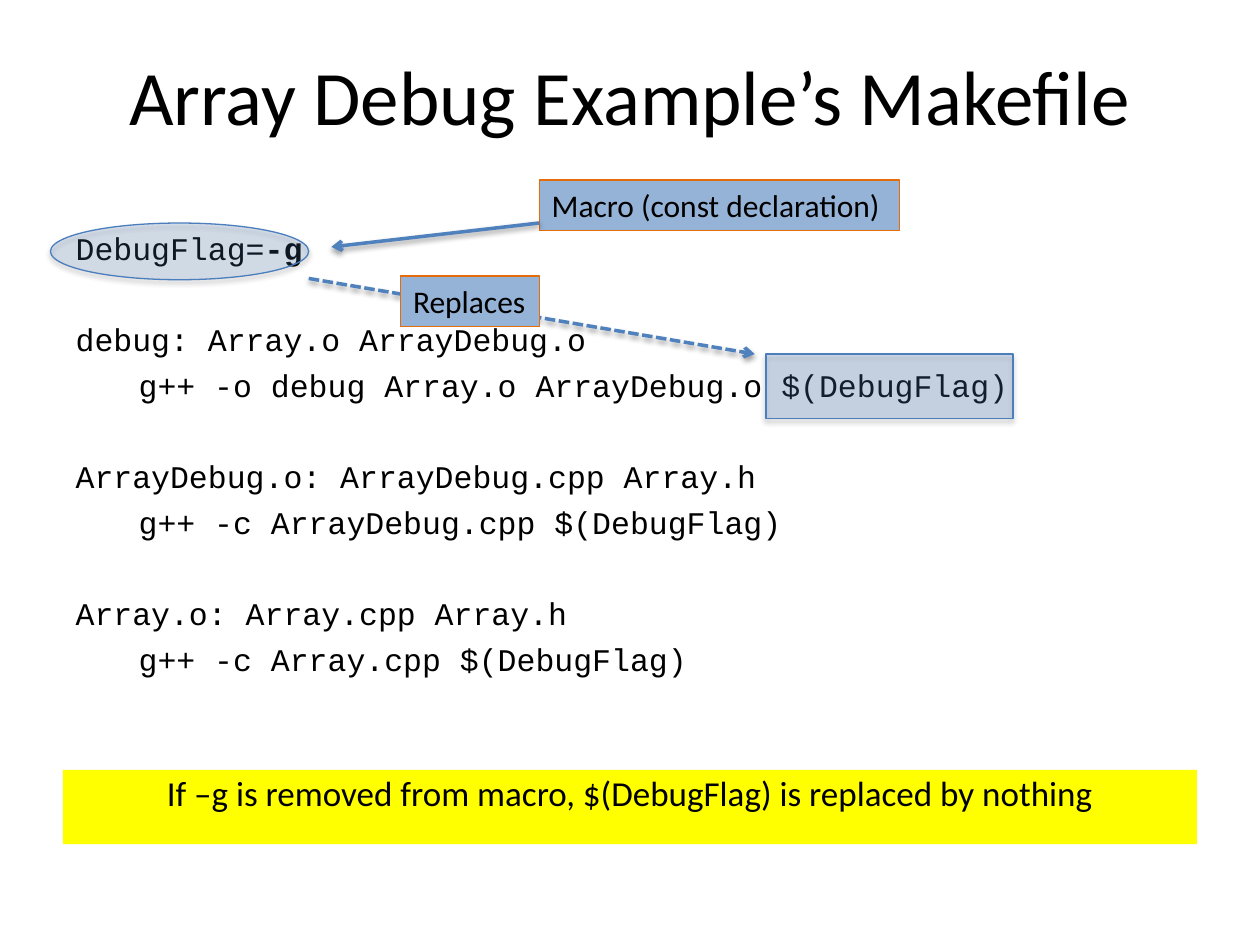
import pptx
import pptx.util
import pptx.oxml
import pptx.oxml.ns
from pptx.dml.color import RGBColor
from pptx.enum.dml import MSO_LINE
from pptx.enum.shapes import MSO_CONNECTOR, MSO_SHAPE
from pptx.enum.text import MSO_ANCHOR, MSO_AUTO_SIZE, PP_ALIGN
from pptx.util import Inches, Pt

THEME = {
    "text_font": "Calibri", "code_font": "Courier New",
    "title_size": 44, "code_size": 18, "label_size": 18, "note_size": 20,
    "ink": "000000", "label_fill": "95B3D7", "label_line": "E46C0A",
    "accent": "4F81BD", "accent_line": "4B7EBC", "note_fill": "FFFF00",
    "thin": 0.75, "arrow": 2, "line_gap": 4.9, "block_gap": 30.2,
}

TITLE = "Array Debug Example’s Makefile"
TITLE_AT = (0.5, 0.3, 9, 0.91)
CODE_AT = (0.5, 1.77, 9, 4.93)
# Each block is a list of lines; a line is a list of (text, bold) spans.
CODE_BLOCKS = [
    [[("DebugFlag=", False), ("-g", True)]],
    [[("debug: Array.o ArrayDebug.o", False)],
     [("\tg++ -o debug Array.o ArrayDebug.o $(DebugFlag)", False)]],
    [[("ArrayDebug.o: ArrayDebug.cpp Array.h", False)],
     [("\tg++ -c ArrayDebug.cpp $(DebugFlag)", False)]],
    [[("Array.o: Array.cpp Array.h", False)],
     [("\tg++ -c Array.cpp $(DebugFlag)", False)]],
]
MACRO_LABEL = ("Macro (const declaration)", (4.28, 1.43, 2.86, 0.4))
REPLACES_LABEL = ("Replaces", (3.18, 2.19, 1.1, 0.4))
NOTE = ("If –g is removed from macro, $(DebugFlag) is replaced by nothing",
        (0.5, 6.11, 9, 0.59))
# Preset, place, opacity in percent
USE_HIGHLIGHT = (MSO_SHAPE.RECTANGLE, (6.08, 2.81, 1.96, 0.51), 24)
MACRO_HIGHLIGHT = (MSO_SHAPE.OVAL, (0.4, 1.77, 2.05, 0.45), 19)
# Start, end, dashed
MACRO_ARROW = ((4.28, 1.77), (2.63, 1.96), False)
REPLACES_ARROW = ((2.45, 2.21), (5.99, 2.81), True)


def color(name):
    return RGBColor.from_string(THEME[name])


def inches(values):
    return [Inches(value) for value in values]


def add_xml(parent, tag, **attributes):
    child = pptx.oxml.parse_xml(f"<a:{tag} {pptx.oxml.ns.nsdecls('a')}/>")
    for name, value in attributes.items():
        child.set(name, str(value))
    parent.append(child)
    return child


def add_shadow(effects, opacity, distance):
    shadow = add_xml(effects, "outerShdw", blurRad=Pt(3.1), dist=Pt(distance),
                     dir=90 * 60000, rotWithShape=0)
    ink = add_xml(shadow, "srgbClr", val=THEME["ink"])
    add_xml(ink, "alpha", val=opacity * 1000)


def style_font(font, family, size):
    font.name = THEME[family]
    font.size = Pt(THEME[size])
    font.color.rgb = color("ink")


def place(shape, at):
    shape.left, shape.top, shape.width, shape.height = inches(at)
    frame = shape.text_frame
    frame.word_wrap = True
    frame.auto_size = MSO_AUTO_SIZE.NONE
    return frame


def add_box(page, preset, at, fill, line=None):
    box = page.shapes.add_shape(preset, *inches(at))
    box.shadow.inherit = False
    box.fill.solid()
    box.fill.fore_color.rgb = color(fill)
    if line:
        box.line.color.rgb = color(line)
        box.line.width = Pt(THEME["thin"])
    else:
        box.line.fill.background()
    return box


def add_text_box(page, text, at, fill, line, size, align):
    box = add_box(page, MSO_SHAPE.RECTANGLE, at, fill, line)
    frame = box.text_frame
    frame.word_wrap = True
    frame.vertical_anchor = MSO_ANCHOR.TOP
    para = frame.paragraphs[0]
    para.text = text
    para.alignment = align
    style_font(para.font, "text_font", size)
    return para


def add_label(page, label):
    add_text_box(page, *label, "label_fill", "label_line", "label_size",
                 PP_ALIGN.LEFT)


def add_highlight(page, highlight):
    preset, at, opacity = highlight
    box = add_box(page, preset, at, "accent", "accent_line")
    properties = box._element.spPr
    fill = properties.find(pptx.oxml.ns.qn("a:solidFill"))
    add_xml(fill[0], "alpha", val=opacity * 1000)
    add_shadow(properties.find(pptx.oxml.ns.qn("a:effectLst")), 35, 1.8)


def add_arrow(page, arrow):
    start, end, dashed = arrow
    line = page.shapes.add_connector(MSO_CONNECTOR.STRAIGHT,
                                     *inches(start + end))
    line.line.color.rgb = color("accent")
    line.line.width = Pt(THEME["arrow"])
    if dashed:
        line.line.dash_style = MSO_LINE.SQUARE_DOT
    properties = line._element.spPr
    add_xml(properties.find(pptx.oxml.ns.qn("a:ln")), "tailEnd", type="arrow")
    add_shadow(add_xml(properties, "effectLst"), 38, 1.6)


def fill_title(page):
    frame = place(page.shapes.title, TITLE_AT)
    frame.vertical_anchor = MSO_ANCHOR.MIDDLE
    para = frame.paragraphs[0]
    para.text = TITLE
    para.alignment = PP_ALIGN.CENTER
    style_font(para.font, "text_font", "title_size")


def fill_code(page):
    frame = place(page.placeholders[1], CODE_AT)
    frame.vertical_anchor = MSO_ANCHOR.TOP
    para = frame.paragraphs[0]
    for block_number, block in enumerate(CODE_BLOCKS):
        for line_number, line in enumerate(block):
            if block_number or line_number:
                para = frame.add_paragraph()
            starts_block = block_number > 0 and line_number == 0
            para.space_before = Pt(
                THEME["block_gap" if starts_block else "line_gap"])
            style_font(para.font, "code_font", "code_size")
            properties = para._p.get_or_add_pPr()
            properties.set("marL", str(Inches(0.5)))
            properties.set("indent", str(Inches(-0.5)))
            properties.insert_element_before(
                pptx.oxml.parse_xml(
                    f"<a:buNone {pptx.oxml.ns.nsdecls('a')}/>"),
                "a:tabLst", "a:defRPr")
            for text, bold in line:
                span = para.add_run()
                span.text = text
                if bold:
                    span.font.bold = True


def main():
    deck = pptx.Presentation()
    deck.slide_width, deck.slide_height = Inches(10), Inches(7.5)
    page = deck.slides.add_slide(deck.slide_layouts[1])
    fill_title(page)
    fill_code(page)
    add_label(page, MACRO_LABEL)
    add_arrow(page, MACRO_ARROW)
    add_highlight(page, USE_HIGHLIGHT)
    add_highlight(page, MACRO_HIGHLIGHT)
    add_arrow(page, REPLACES_ARROW)
    note = add_text_box(page, *NOTE, "note_fill", None, "note_size",
                        PP_ALIGN.CENTER)
    note.line_spacing = 0.9
    note.space_before = Pt(4)
    add_label(page, REPLACES_LABEL)
    deck.save("out.pptx")


if __name__ == "__main__":
    main()
